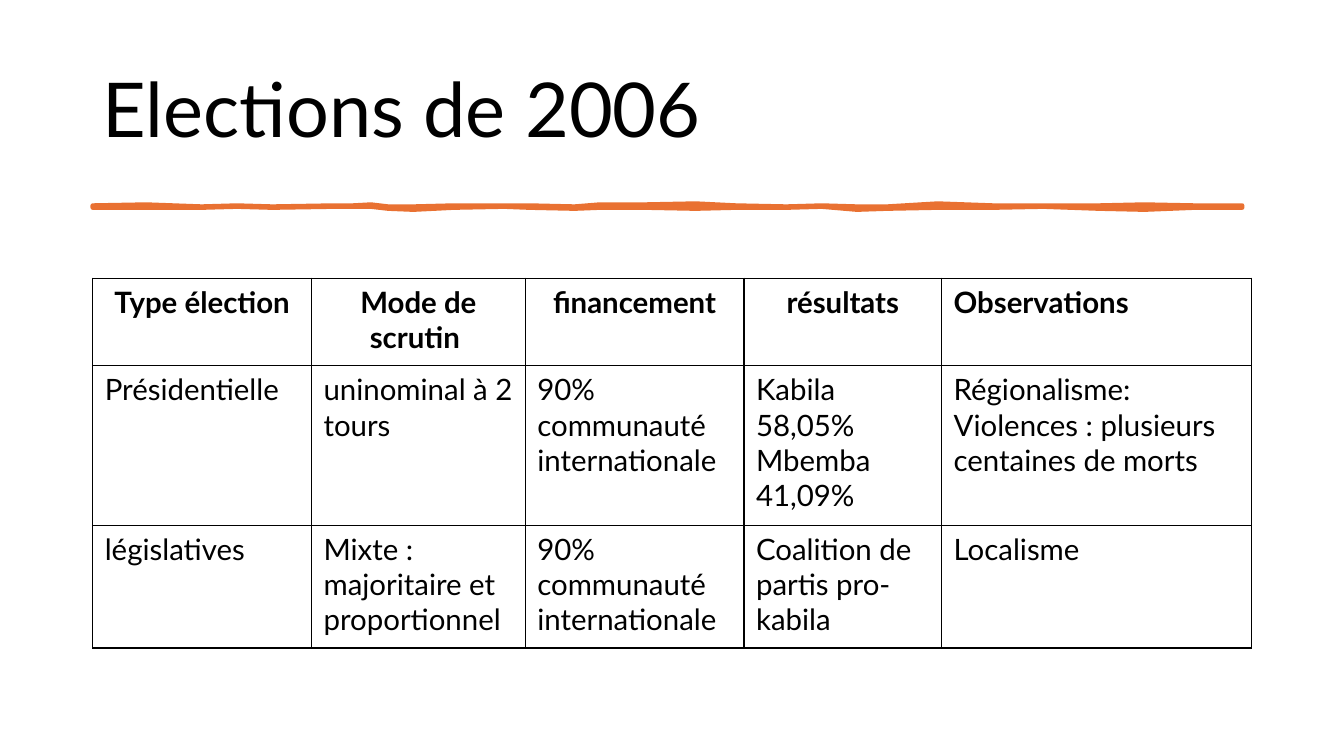
from typing import NamedTuple

from lxml import etree
from pptx import Presentation
from pptx import util as u
from pptx.dml.color import RGBColor
from pptx.enum import text
from pptx.oxml import ns

PX = u.Inches(1) // 100
BLACK = RGBColor(0x00, 0x00, 0x00)
WHITE = RGBColor(0xFF, 0xFF, 0xFF)
ORANGE = RGBColor(0xE9, 0x71, 0x32)
FONT = "Lato"
LEFT = 92
ROW_HEIGHTS = (87, 158, 122)


class Column(NamedTuple):
    width: int
    heading: str
    presidential: str
    legislative: str
    heading_align: text.PP_ALIGN = text.PP_ALIGN.CENTER


class StrokePoint(NamedTuple):
    x: int
    top: int
    bottom: int


COLUMNS = (
    Column(217, "Type élection", "Présidentielle", "législatives"),
    Column(212, "Mode de scrutin ", "uninominal à 2 tours",
           "Mixte : majoritaire et proportionnel"),
    Column(217, "financement", "90% communauté internationale",
           "90% communauté internationale"),
    Column(196, "résultats", "Kabila 58,05%\nMbemba 41,09%",
           "Coalition de partis pro-kabila"),
    Column(307, "Observations",
           "Régionalisme: Violences : plusieurs centaines de morts",
           "Localisme", text.PP_ALIGN.LEFT),
)

BRUSH_STROKE = (
    StrokePoint(92, 204, 206), StrokePoint(145, 203, 206),
    StrokePoint(200, 205, 206), StrokePoint(235, 204, 205),
    StrokePoint(270, 205, 206), StrokePoint(331, 204, 205),
    StrokePoint(350, 204, 205), StrokePoint(368, 203, 205),
    StrokePoint(385, 205, 207), StrokePoint(410, 205, 208),
    StrokePoint(450, 204, 206), StrokePoint(500, 204, 205),
    StrokePoint(525, 204, 206), StrokePoint(570, 205, 207),
    StrokePoint(595, 203, 206), StrokePoint(640, 203, 206),
    StrokePoint(690, 202, 207), StrokePoint(730, 204, 206),
    StrokePoint(780, 205, 206), StrokePoint(815, 204, 205),
    StrokePoint(850, 205, 208), StrokePoint(880, 205, 207),
    StrokePoint(930, 202, 206), StrokePoint(985, 204, 206),
    StrokePoint(1035, 204, 205), StrokePoint(1090, 204, 207),
    StrokePoint(1135, 203, 208), StrokePoint(1185, 204, 206),
    StrokePoint(1232, 204, 206),
)


def write(frame: text, content: str, *, size: int, bold: bool = False,
          align: text.PP_ALIGN = text.PP_ALIGN.LEFT,
          spacing: float = 1.0) -> None:
    frame.word_wrap = True
    frame.text = content
    for paragraph in frame.paragraphs:
        paragraph.alignment = align
        paragraph.line_spacing = spacing
        for run in paragraph.runs:
            run.font.name = FONT
            run.font.size = u.Pt(size)
            run.font.bold = bold
            run.font.color.rgb = BLACK


def add_borders(cell) -> None:
    properties = cell._tc.get_or_add_tcPr()
    for position, side in enumerate(("lnL", "lnR", "lnT", "lnB")):
        border = etree.Element(ns.qn(f"a:{side}"), w=str(u.Pt(1)))
        fill = etree.SubElement(border, ns.qn("a:solidFill"))
        etree.SubElement(fill, ns.qn("a:srgbClr"), val=str(BLACK))
        properties.insert(position, border)


def add_title(slide) -> None:
    title = slide.shapes.add_textbox(LEFT * PX, 40 * PX, 1150 * PX, 145 * PX)
    title.text_frame.vertical_anchor = text.MSO_ANCHOR.MIDDLE
    write(title.text_frame, "Elections de 2006", size=54, spacing=0.9)


def add_brush_stroke(slide) -> None:
    outline = [(point.x, point.top) for point in BRUSH_STROKE]
    outline += [(point.x, point.bottom) for point in reversed(BRUSH_STROKE)]
    builder = slide.shapes.build_freeform(*outline[0], scale=PX)
    builder.add_line_segments(outline[1:], close=True)
    stroke = builder.convert_to_shape()
    stroke.shadow.inherit = False
    stroke.fill.solid()
    stroke.fill.fore_color.rgb = ORANGE
    stroke.line.color.rgb = ORANGE
    stroke.line.width = u.Pt(3.25)


def add_elections_table(slide) -> None:
    elections = slide.shapes.add_table(
        len(ROW_HEIGHTS), len(COLUMNS), LEFT * PX, 276 * PX,
        sum(column.width for column in COLUMNS) * PX,
        sum(ROW_HEIGHTS) * PX).table
    elections.first_row = False
    elections.horz_banding = False
    for row, height in zip(elections.rows, ROW_HEIGHTS):
        row.height = height * PX
    for index, column in enumerate(COLUMNS):
        elections.columns[index].width = column.width * PX
        entries = (column.heading, column.presidential, column.legislative)
        for row, entry in enumerate(entries):
            cell = elections.cell(row, index)
            cell.margin_left = cell.margin_right = 12 * PX
            cell.margin_top = cell.margin_bottom = 6 * PX
            cell.fill.solid()
            cell.fill.fore_color.rgb = WHITE
            add_borders(cell)
            heading = row == 0
            write(cell.text_frame, entry, size=21, bold=heading,
                  align=column.heading_align if heading
                  else text.PP_ALIGN.LEFT)


def main() -> None:
    deck = Presentation()
    deck.slide_width = u.Inches(13.33)
    deck.slide_height = u.Inches(7.5)
    slide = deck.slides.add_slide(deck.slide_layouts[6])
    add_title(slide)
    add_brush_stroke(slide)
    add_elections_table(slide)
    deck.save("out.pptx")


if __name__ == "__main__":
    main()
